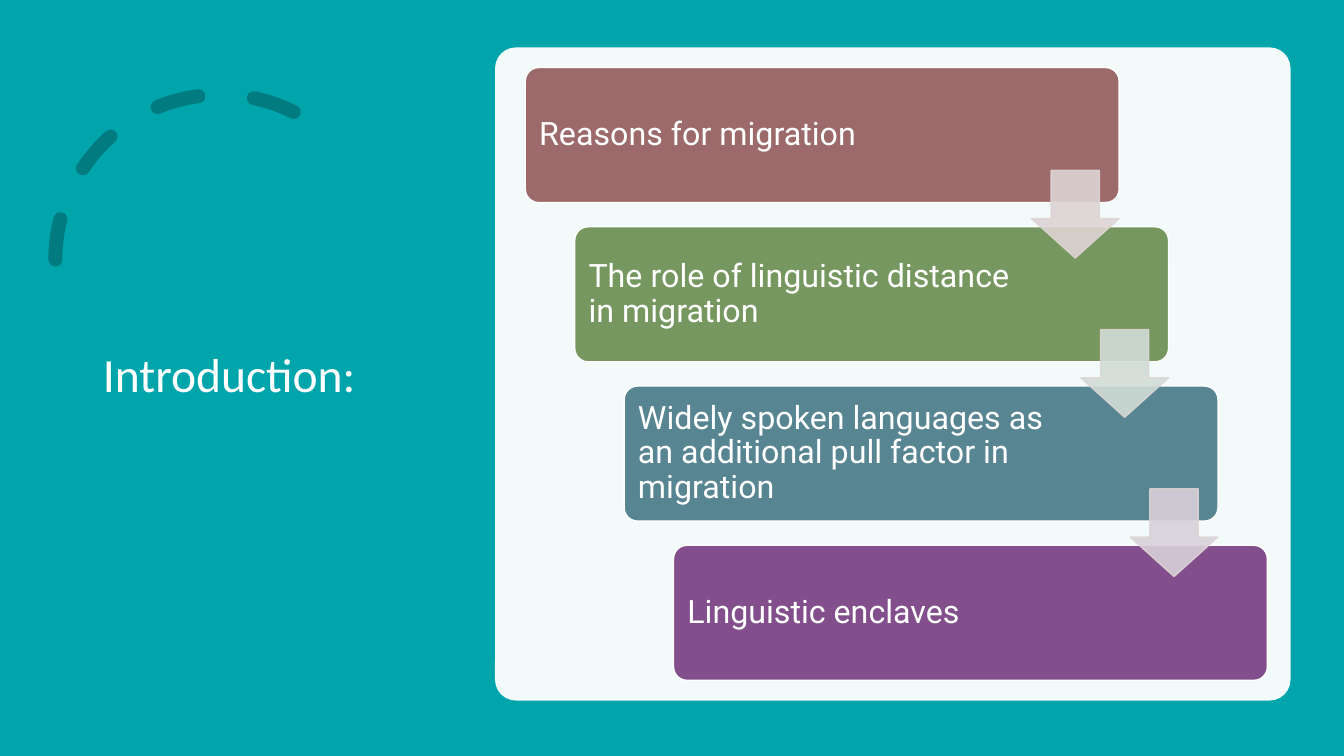
from lxml import etree
from pptx import Presentation
from pptx.dml.color import RGBColor
from pptx.enum.dml import MSO_LINE
from pptx.enum.shapes import MSO_SHAPE
from pptx.enum.text import MSO_ANCHOR, PP_ALIGN
from pptx.oxml.ns import qn
from pptx.util import Inches, Pt

ROUNDED, ARROW, ARC = MSO_SHAPE.ROUNDED_RECTANGLE, MSO_SHAPE.DOWN_ARROW, MSO_SHAPE.ARC
DASH = MSO_LINE.DASH
MIDDLE, LEFT = MSO_ANCHOR.MIDDLE, PP_ALIGN.LEFT

COLORS = {
    "teal": "00A5AB",
    "dark teal": "007C80",
    "white": "FFFFFF",
    "arrow edge": "DED4D4",
}

# Card text, card colour, colour of the arrow leading to the next card
STEPS = [
    ("Reasons for migration", "9C6A6A", "DED4D4"),
    ("The role of linguistic distance in migration", "769860", "D2DCD6"),
    ("Widely spoken languages as an additional pull factor in migration", "578592", "D8D0DA"),
    ("Linguistic enclaves", "824F8C", None),
]

# Staircase grid, in inches
STAIR_LEFT, STAIR_TOP = 5.21, 0.67
STEP_X, STEP_Y = 0.49, 1.58
CARD_W, CARD_H = 5.89, 1.34
ARROW_X, ARROW_Y, ARROW_SIZE = 5.02, 1.02, 0.87


def paint(format_, color, opacity=100):
    """Give a fill a solid colour, with opacity in percent."""
    format_.solid()
    format_.fore_color.rgb = RGBColor.from_string(color)
    if opacity < 100:
        for rgb in format_._xPr.iter(qn("a:srgbClr")):
            etree.SubElement(rgb, qn("a:alpha")).set("val", str(opacity * 1000))


def add_block(kind, left, top, width, height, *adjustments):
    """Add a preset shape, in inches, without fill, line or shadow."""
    block = slide.shapes.add_shape(
        kind, Inches(left), Inches(top), Inches(width), Inches(height))
    block.shadow.inherit = False
    block.fill.background()
    block.line.fill.background()
    for i, adjustment in enumerate(adjustments):
        block.adjustments[i] = adjustment
    return block


prs = Presentation()
prs.slide_width, prs.slide_height = Inches(13.33), Inches(7.5)
slide = prs.slides.add_slide(prs.slide_layouts[5])
paint(slide.background.fill, COLORS["teal"])

# Title
title = slide.shapes.title
title.left, title.top, title.width, title.height = (
    Inches(n) for n in (0.92, 0.7, 3.23, 6.09))
title.text_frame.text = "Introduction:"
title.text_frame.vertical_anchor = MIDDLE
heading = title.text_frame.paragraphs[0]
heading.alignment = LEFT
heading.line_spacing = 0.9
heading.font.name, heading.font.size = "Calibri", Pt(34)
heading.font.color.rgb = RGBColor.from_string(COLORS["white"])

# Dashed arc, mirrored, with round dash ends
arc = add_block(ARC, 0.55, 0.94, 3.27, 3.27, 146.13, 0)
paint(arc.line.fill, COLORS["dark teal"])
arc.line.width = Pt(10)
arc.line.dash_style = DASH
arc._element.spPr.find(qn("a:xfrm")).set("flipH", "1")
arc._element.spPr.find(qn("a:ln")).set("cap", "rnd")

# Pale panel
panel = add_block(ROUNDED, 4.91, 0.47, 7.89, 6.48, 0.032)
paint(panel.fill, COLORS["white"], 95)

# Cards
for i, (topic, card_color, _) in enumerate(STEPS):
    card = add_block(ROUNDED, STAIR_LEFT + i * STEP_X, STAIR_TOP + i * STEP_Y,
                     CARD_W, CARD_H, 0.1)
    paint(card.fill, card_color)
    paint(card.line.fill, COLORS["white"])
    card.line.width = Pt(1)
    frame = card.text_frame
    frame.word_wrap = True
    frame.vertical_anchor = MIDDLE
    frame.margin_left = frame.margin_top = frame.margin_bottom = Inches(0.1)
    frame.margin_right = Inches(1.46)
    frame.text = topic
    label = frame.paragraphs[0]
    label.alignment = LEFT
    label.line_spacing = 0.9
    label.font.name, label.font.size = "Roboto", Pt(23)
    label.font.color.rgb = RGBColor.from_string(COLORS["white"])

# Arrows between cards, on top of them
for i, (_, _, arrow_color) in enumerate(STEPS[:-1]):
    arrow = add_block(ARROW, STAIR_LEFT + i * STEP_X + ARROW_X,
                      STAIR_TOP + i * STEP_Y + ARROW_Y,
                      ARROW_SIZE, ARROW_SIZE, 0.55, 0.45)
    paint(arrow.fill, arrow_color, 90)
    paint(arrow.line.fill, COLORS["arrow edge"], 90)
    arrow.line.width = Pt(1)

prs.save("out.pptx")
